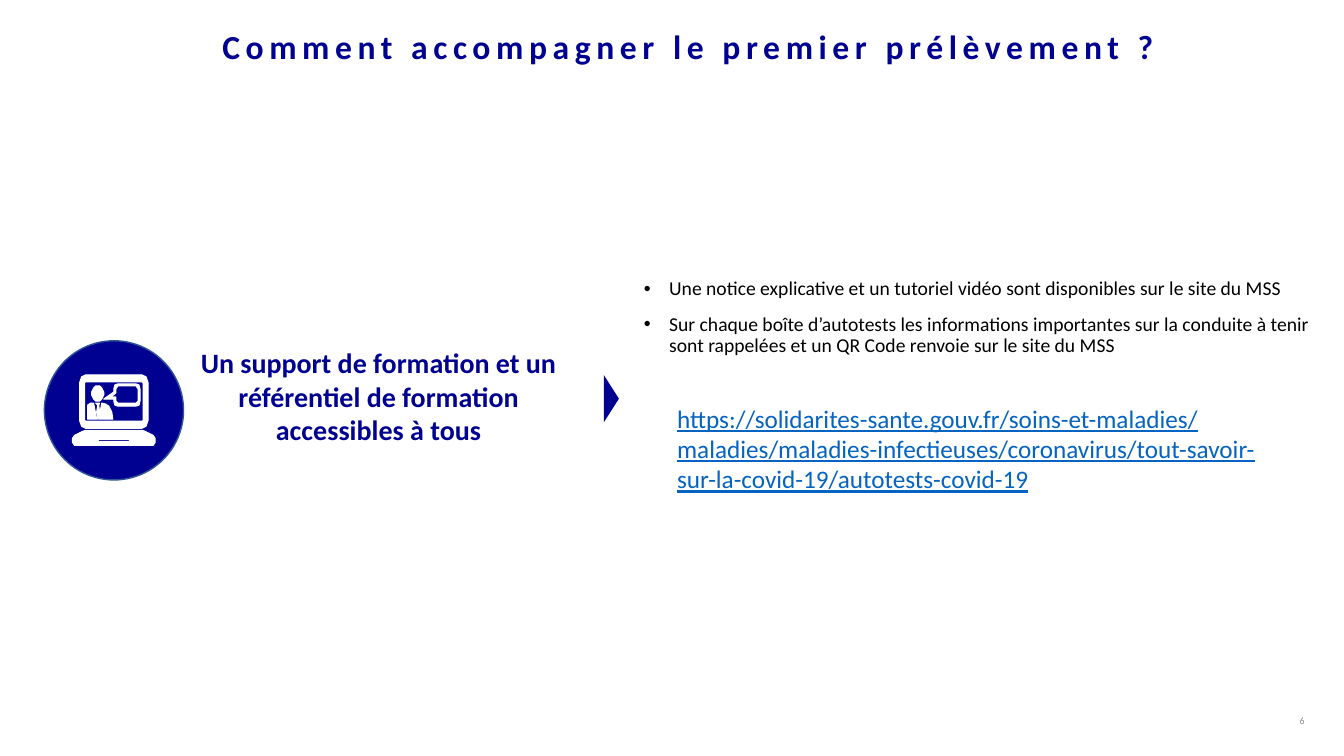
import math

from lxml import etree
from pptx import Presentation
from pptx.dml.color import RGBColor
from pptx.enum import shapes, text
from pptx.oxml.ns import qn
from pptx.util import Pt

NAVY = RGBColor(0x00, 0x00, 0x91)
RING = RGBColor(0x2F, 0x55, 0x97)
LINK = RGBColor(0x05, 0x63, 0xC1)
GREY = RGBColor(0x8C, 0x8C, 0x8C)
BLACK = RGBColor(0, 0, 0)
WHITE = RGBColor(0xFF, 0xFF, 0xFF)
LEFT, CENTER, RIGHT = text.PP_ALIGN.LEFT, text.PP_ALIGN.CENTER, text.PP_ALIGN.RIGHT
TOP, MIDDLE = text.MSO_ANCHOR.TOP, text.MSO_ANCHOR.MIDDLE

deck = Presentation()
deck.slide_width, deck.slide_height = Pt(960), Pt(540)
slide = deck.slides.add_slide(deck.slide_layouts[6])


def add_text(box, wording, size, color, bold=False, align=LEFT, anchor=TOP):
    """Add a wrapped text box at box (left, top, width, height) and return its paragraphs."""
    frame = slide.shapes.add_textbox(*map(Pt, box)).text_frame
    frame.word_wrap = True
    frame.vertical_anchor = anchor
    frame.text = wording
    for paragraph in frame.paragraphs:
        paragraph.alignment = align
        font = paragraph.runs[0].font
        font.name, font.size, font.bold = "Calibri", Pt(size), bold
        font.color.rgb = color
    return frame.paragraphs


def paint(shape, fill, line=None, width=0):
    shape.shadow.inherit = False
    shape.fill.solid()
    shape.fill.fore_color.rgb = fill
    if line is None:
        shape.line.fill.background()
    else:
        shape.line.color.rgb = line
        shape.line.width = Pt(width)


# Title
title = add_text((31.7, 7.9, 920, 53.3), "Comment accompagner le premier prélèvement ?",
                 24, NAVY, True, CENTER, MIDDLE)[0]
title.line_spacing = 0.9
title.runs[0].font._element.set("spc", "400")

# Laptop with a trainer, in a disc
disc = slide.shapes.add_shape(shapes.MSO_SHAPE.OVAL, Pt(31.7), Pt(243.4), Pt(99.4), Pt(99.4))
paint(disc, NAVY, RING, 1)

# Outlines in hundredths of the icon's 59 pt width; overlaps cut holes
head = [(25 + 6 * math.cos(math.tau * i / 24), 18.5 + 7.5 * math.sin(math.tau * i / 24))
        for i in range(24)]
laptop = [
    # lid and screen
    [(13, 0), (69, 0), (73, 2), (75, 8), (75, 45), (73, 51), (69, 53),
     (13, 53), (9, 51), (7, 45), (7, 8), (9, 2)],
    [(13, 7), (69, 7), (70, 8), (70, 45), (69, 46), (13, 46), (12, 45), (12, 8)],
    # keyboard and its slot
    [(13, 55), (69, 55), (72, 56), (80, 60), (82, 63), (82, 67), (80, 70),
     (2, 70), (0, 67), (0, 63), (2, 60), (10, 56)],
    [(26, 64), (56, 64), (57, 65), (56, 66), (26, 66), (25, 65)],
    # speech bubble and its inside
    [(41, 24), (41, 26), (42, 30), (45, 31), (63, 31), (66, 30), (67, 26), (67, 14),
     (66, 10), (63, 9), (45, 9), (42, 10), (41, 14), (41, 17), (31, 24)],
    [(43, 18), (43, 14), (45, 11), (63, 11), (65, 14), (65, 26), (63, 28),
     (45, 28), (43, 26), (43, 22), (38, 22)],
    # trainer: head, tie, both sides of the jacket
    head,
    [(25, 44), (27, 37), (26, 30), (27, 28), (23, 28), (25, 30), (24, 37)],
    [(29, 28), (26, 44), (40, 44), (39, 37), (36, 31), (33, 29)],
    [(15, 44), (24, 44), (21, 28), (18, 28), (15, 30)],
]
pen = slide.shapes.build_freeform(*laptop[0][0], scale=Pt(0.72))
for outline in laptop:
    if outline is not laptop[0]:
        pen.move_to(*outline[0])
    pen.add_line_segments(outline[1:], close=True)
paint(pen.convert_to_shape(Pt(51.8), Pt(267.8)), WHITE, WHITE, 0.75)

# Heading and the pointer to its details
pointer = slide.shapes.add_shape(shapes.MSO_SHAPE.ISOSCELES_TRIANGLE,
                                 Pt(419.8), Pt(279.4), Pt(33.8), Pt(10.8))
pointer.rotation = 90
paint(pointer, NAVY)
add_text((124.6, 243.4, 291.6, 79.9),
         "Un support de formation et un référentiel de formation accessibles à tous",
         20, NAVY, True, CENTER)

# Details
details = add_text(
    (452.9, 195.8, 499, 64.8),
    "Une notice explicative et un tutoriel vidéo sont disponibles sur le site du MSS\n"
    "Sur chaque boîte d’autotests les informations importantes sur la conduite à tenir "
    "sont rappelées et un QR Code renvoie sur le site du MSS", 14, BLACK)
for detail in details:
    detail.line_spacing = 0.9
    detail.space_before = Pt(10)
    props = detail._p.get_or_add_pPr()
    props.set("marL", str(Pt(18)))
    props.set("indent", str(Pt(-18)))
    etree.SubElement(props, qn("a:buFont"), typeface="Arial")
    etree.SubElement(props, qn("a:buChar"), char="•")

# Web address and page number
address = add_text((476.6, 284.4, 452.2, 116.6),
                   "https://solidarites-sante.gouv.fr/soins-et-maladies/maladies/"
                   "maladies-infectieuses/coronavirus/tout-savoir-sur-la-covid-19/"
                   "autotests-covid-19", 18, LINK)[0]
address.runs[0].font.underline = True
add_text((722.9, 500.4, 216, 28.8), "6", 7, GREY, align=RIGHT, anchor=MIDDLE)

deck.save("out.pptx")
